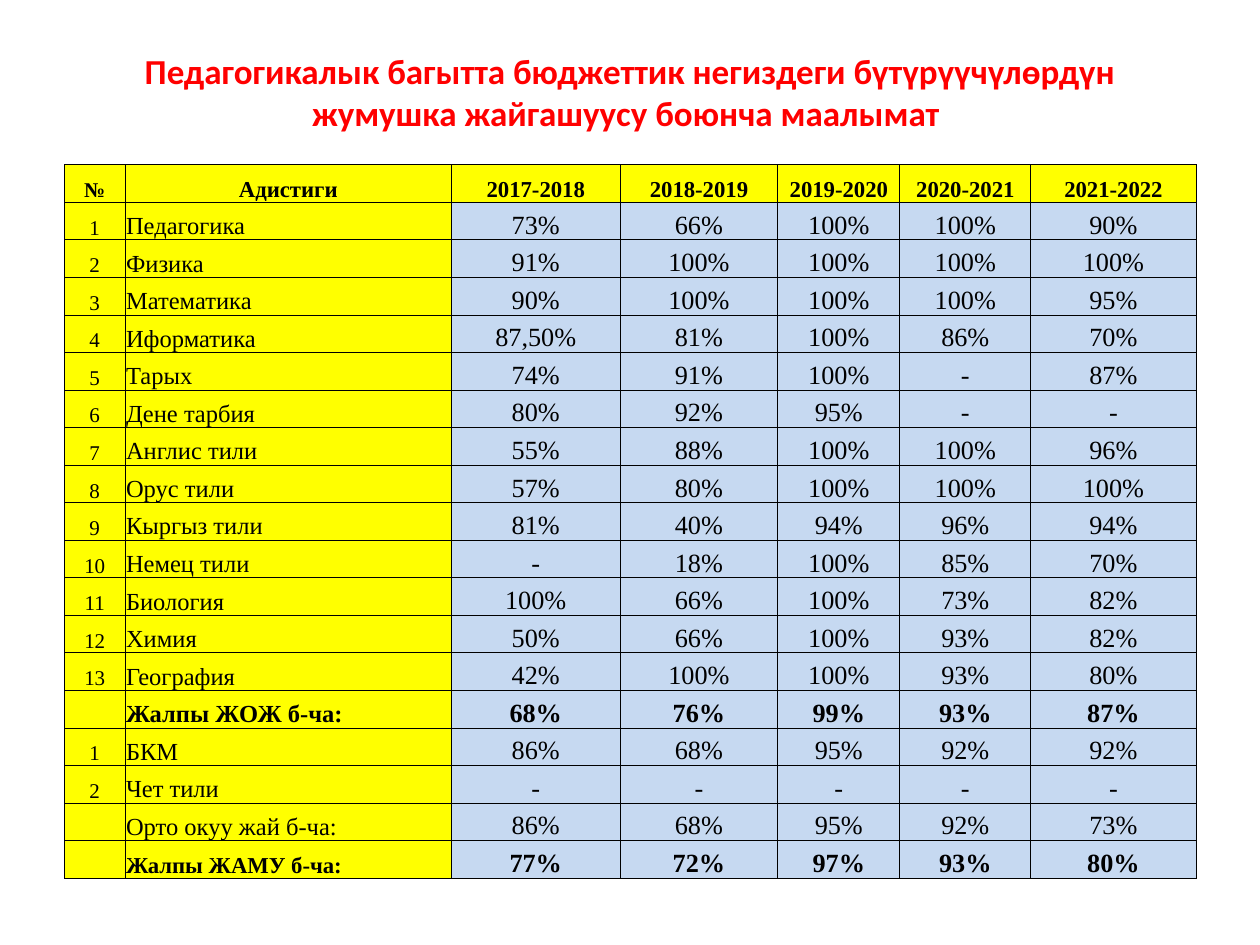
from dataclasses import dataclass

from lxml.etree import SubElement
from pptx import Presentation
from pptx.dml.color import RGBColor
from pptx.enum.text import MSO_ANCHOR, MSO_AUTO_SIZE, PP_ALIGN
from pptx.oxml.ns import qn
from pptx.util import Cm, Pt

YELLOW, LIGHT_BLUE, RED, BLACK = "FFFF00", "C6D9F1", "FF0000", "000000"
COLUMN_WIDTHS = (1.22, 6.58, 3.4, 3.18, 2.46, 2.64, 3.33)
TABLE_HEIGHT = 14.4


@dataclass(frozen=True)
class Row:
    number: str
    name: str
    values: str
    bold: bool = False
    name_size: int = 14
    value_size: int = 15
    value_fill: str = LIGHT_BLUE
    name_align: PP_ALIGN = PP_ALIGN.LEFT


ROWS = (
    Row("№", "Адистиги", "2017-2018 2018-2019 2019-2020 2020-2021 2021-2022",
        True, 13, 13, YELLOW, PP_ALIGN.CENTER),
    Row("1", "Педагогика", "73% 66% 100% 100% 90%"),
    Row("2", "Физика", "91% 100% 100% 100% 100%"),
    Row("3", "Математика", "90% 100% 100% 100% 95%"),
    Row("4", "Иформатика", "87,50% 81% 100% 86% 70%"),
    Row("5", "Тарых", "74% 91% 100% - 87%"),
    Row("6", "Дене тарбия", "80% 92% 95% - -"),
    Row("7", "Англис тили", "55% 88% 100% 100% 96%"),
    Row("8", "Орус тили", "57% 80% 100% 100% 100%"),
    Row("9", "Кыргыз тили", "81% 40% 94% 96% 94%"),
    Row("10", "Немец тили", "- 18% 100% 85% 70%"),
    Row("11", "Биология", "100% 66% 100% 73% 82%"),
    Row("12", "Химия", "50% 66% 100% 93% 82%"),
    Row("13", "География", "42% 100% 100% 93% 80%"),
    Row("", "Жалпы ЖОЖ б-ча:", "68% 76% 99% 93% 87%", True),
    Row("1", "БКМ", "86% 68% 95% 92% 92%"),
    Row("2", "Чет тили", "- - - - -"),
    Row("", "Орто окуу жай б-ча:", "86% 68% 95% 92% 73%"),
    Row("", "Жалпы ЖАМУ б-ча:", "77% 72% 97% 93% 80%", True, 13),
)


def color(value: str) -> RGBColor:
    return RGBColor.from_string(value)


def write_text(text_frame, text: str, *, size: int, font: str = "Times New Roman",
               fill: str = BLACK, bold: bool = False,
               align: PP_ALIGN = PP_ALIGN.CENTER) -> None:
    paragraph = text_frame.paragraphs[0]
    paragraph.alignment = align
    if not text:
        # An empty cell still needs a small size to keep its row height
        SubElement(paragraph._p, qn("a:endParaRPr"), sz=str(size * 100))
        return
    run = paragraph.add_run()
    run.text = text
    run.font.name = font
    run.font.size = Pt(size)
    run.font.bold = bold
    run.font.color.rgb = color(fill)


def draw_borders(cell, line_color: str = BLACK, width: float = 0.5) -> None:
    properties = cell._tc.get_or_add_tcPr()
    for side in ("lnL", "lnR", "lnT", "lnB"):
        line = SubElement(properties, qn(f"a:{side}"), w=str(Pt(width)))
        solid = SubElement(line, qn("a:solidFill"))
        SubElement(solid, qn("a:srgbClr"), val=line_color)


def fill_cell(cell, text: str, background: str, **text_format) -> None:
    cell.margin_left = cell.margin_right = cell.margin_top = Cm(0.02)
    cell.margin_bottom = 0
    cell.vertical_anchor = MSO_ANCHOR.BOTTOM
    draw_borders(cell)
    cell.fill.solid()
    cell.fill.fore_color.rgb = color(background)
    write_text(cell.text_frame, text, **text_format)


def draw_title(slide) -> None:
    title = slide.shapes.title
    title.left, title.top, title.width, title.height = Cm(1.27), Cm(0.76), Cm(22.86), Cm(2.16)
    title.text_frame.auto_size = MSO_AUTO_SIZE.NONE
    title.text_frame.word_wrap = True
    title.text_frame.vertical_anchor = MSO_ANCHOR.MIDDLE
    write_text(title.text_frame,
               "Педагогикалык багытта бюджеттик негиздеги бүтүрүүчүлөрдүн "
               "жумушка жайгашуусу боюнча маалымат ",
               size=20, font="Calibri", fill=RED, bold=True)


def draw_table(slide) -> None:
    table = slide.shapes.add_table(
        len(ROWS), len(COLUMN_WIDTHS), Cm(1.3), Cm(3.32),
        Cm(sum(COLUMN_WIDTHS)), Cm(TABLE_HEIGHT)).table
    table.first_row = table.horz_banding = False
    for column, width in zip(table.columns, COLUMN_WIDTHS):
        column.width = Cm(width)
    for index, row in enumerate(ROWS):
        table.rows[index].height = Cm(TABLE_HEIGHT / len(ROWS))
        fill_cell(table.cell(index, 0), row.number, YELLOW, size=12, bold=row.bold)
        fill_cell(table.cell(index, 1), row.name, YELLOW, size=row.name_size,
                  bold=row.bold, align=row.name_align)
        for column_index, value in enumerate(row.values.split(), start=2):
            fill_cell(table.cell(index, column_index), value, row.value_fill,
                      size=row.value_size, bold=row.bold)


def main() -> None:
    presentation = Presentation()
    presentation.slide_width, presentation.slide_height = Cm(25.4), Cm(19.05)
    title_only = presentation.slide_layouts[5]
    slide = presentation.slides.add_slide(title_only)
    draw_title(slide)
    draw_table(slide)
    presentation.save("out.pptx")


if __name__ == "__main__":
    main()
